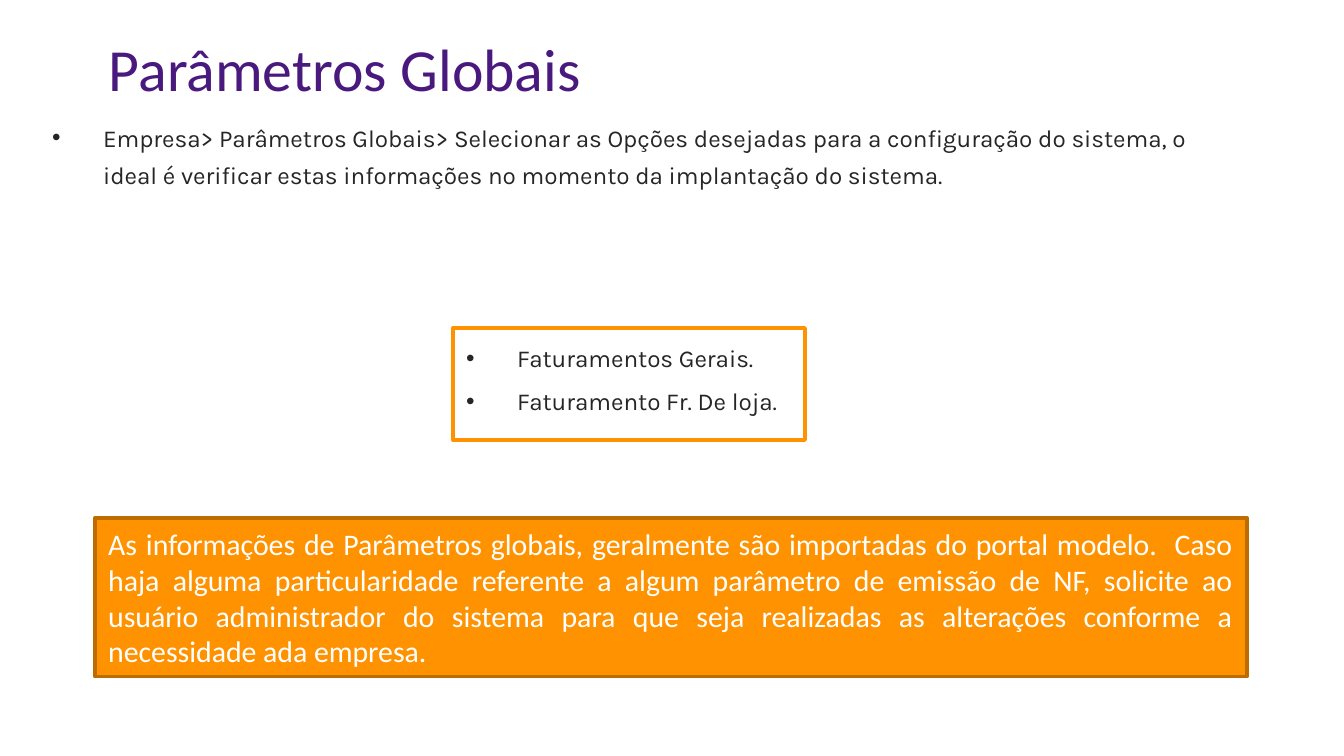
from dataclasses import dataclass

from lxml.etree import SubElement
from pptx import Presentation
from pptx.dml.color import RGBColor as RGB
from pptx.enum.shapes import MSO_SHAPE as SHAPE
from pptx.enum.text import MSO_ANCHOR as ANCHOR, MSO_AUTO_SIZE as AUTO, PP_ALIGN as ALIGN
from pptx.oxml.ns import qn
from pptx.util import Emu, Inches, Pt


@dataclass(frozen=True)
class Theme:
    purple: RGB = RGB(0x49, 0x19, 0x7D)
    ink: RGB = RGB(0x26, 0x26, 0x26)
    orange: RGB = RGB(0xFF, 0x92, 0x00)
    brown: RGB = RGB(0xBD, 0x6C, 0x00)
    white: RGB = RGB(0xFF, 0xFF, 0xFF)
    heading_font: str = "Calibri"
    list_font: str = "Karla"
    title_size: int = 32
    note_size: int = 16
    list_size: int = 13
    border: int = 2


THEME = Theme()
SLIDE_W = 10
SLIDE_H = SLIDE_W * 9 / 16

# Boxes: left, top, width, height as percentages of the slide
TITLE_BOX = (7.1, 3.25, 81.6, 7.8)
BODY_BOX = (2.87, 14.2, 89.8, 13.7)
OPTIONS_BOX = (33.7, 43.4, 26.2, 14.8)
NOTE_BOX = (7.07, 68.5, 85.7, 21)

TITLE = "Parâmetros Globais"
STEPS = [
    "Empresa> Parâmetros Globais> Selecionar as Opções desejadas para a "
    "configuração do sistema, o ideal é verificar estas informações no momento "
    "da implantação do sistema."
]
OPTIONS = ["Faturamentos Gerais.", "Faturamento Fr. De loja."]
NOTE = (
    "As informações de Parâmetros globais, geralmente são importadas do portal "
    "modelo.  Caso haja alguma particularidade referente a algum parâmetro de "
    "emissão de NF, solicite ao usuário administrador do sistema para que seja "
    "realizadas as alterações conforme a necessidade ada empresa."
)


def to_emu(box):
    sides = (SLIDE_W, SLIDE_H) * 2
    return [Inches(share * side / 100) for share, side in zip(box, sides)]


def place(sp, box):
    sp.left, sp.top, sp.width, sp.height = to_emu(box)


def prepare_frame(tf, anchor):
    tf.word_wrap = True
    tf.auto_size = AUTO.NONE
    tf.vertical_anchor = anchor
    tf.margin_left = tf.margin_right = Inches(0.1)
    tf.margin_top = tf.margin_bottom = Inches(0.05)


def style_runs(p, font, size, color):
    for r in p.runs:
        r.font.name = font
        r.font.size = Pt(size)
        r.font.color.rgb = color


def fill_list(tf, items):
    """Write bulleted paragraphs with a hanging indent."""
    prepare_frame(tf, ANCHOR.TOP)
    tf.text = "\n".join(items)
    indent = Inches(0.38)
    for i, p in enumerate(tf.paragraphs):
        p.alignment = ALIGN.LEFT
        p.line_spacing = 1.3
        p.space_before = Pt(0.2 * THEME.list_size if i else 0)
        pPr = p._p.get_or_add_pPr()
        pPr.set("marL", str(indent))
        pPr.set("indent", str(Emu(-indent)))
        SubElement(pPr, qn("a:buFont")).set("typeface", "Arial")
        SubElement(pPr, qn("a:buChar")).set("char", "•")
        style_runs(p, THEME.list_font, THEME.list_size, THEME.ink)


def add_panel(slide, box, fill, line):
    sp = slide.shapes.add_shape(SHAPE.RECTANGLE, *to_emu(box))
    sp.shadow.inherit = False
    sp.fill.solid()
    sp.fill.fore_color.rgb = fill
    sp.line.color.rgb = line
    sp.line.width = Pt(THEME.border)
    return sp


def add_title(slide, box):
    sp = slide.shapes.title
    place(sp, box)
    tf = sp.text_frame
    prepare_frame(tf, ANCHOR.TOP)
    tf.text = TITLE
    p = tf.paragraphs[0]
    p.alignment = ALIGN.LEFT
    style_runs(p, THEME.heading_font, THEME.title_size, THEME.purple)


def add_steps(slide, box):
    sp = slide.placeholders[1]
    place(sp, box)
    fill_list(sp.text_frame, STEPS)


def add_note(slide, box):
    tf = add_panel(slide, box, THEME.orange, THEME.brown).text_frame
    prepare_frame(tf, ANCHOR.MIDDLE)
    tf.text = NOTE
    p = tf.paragraphs[0]
    p.alignment = ALIGN.JUSTIFY
    style_runs(p, THEME.heading_font, THEME.note_size, THEME.white)


def add_options(slide, box):
    sp = add_panel(slide, box, THEME.white, THEME.orange)
    fill_list(sp.text_frame, OPTIONS)


def main():
    prs = Presentation()
    prs.slide_width, prs.slide_height = Inches(SLIDE_W), Inches(SLIDE_H)
    slide = prs.slides.add_slide(prs.slide_layouts[1])
    add_title(slide, TITLE_BOX)
    add_steps(slide, BODY_BOX)
    add_note(slide, NOTE_BOX)
    add_options(slide, OPTIONS_BOX)
    prs.save("out.pptx")


if __name__ == "__main__":
    main()
